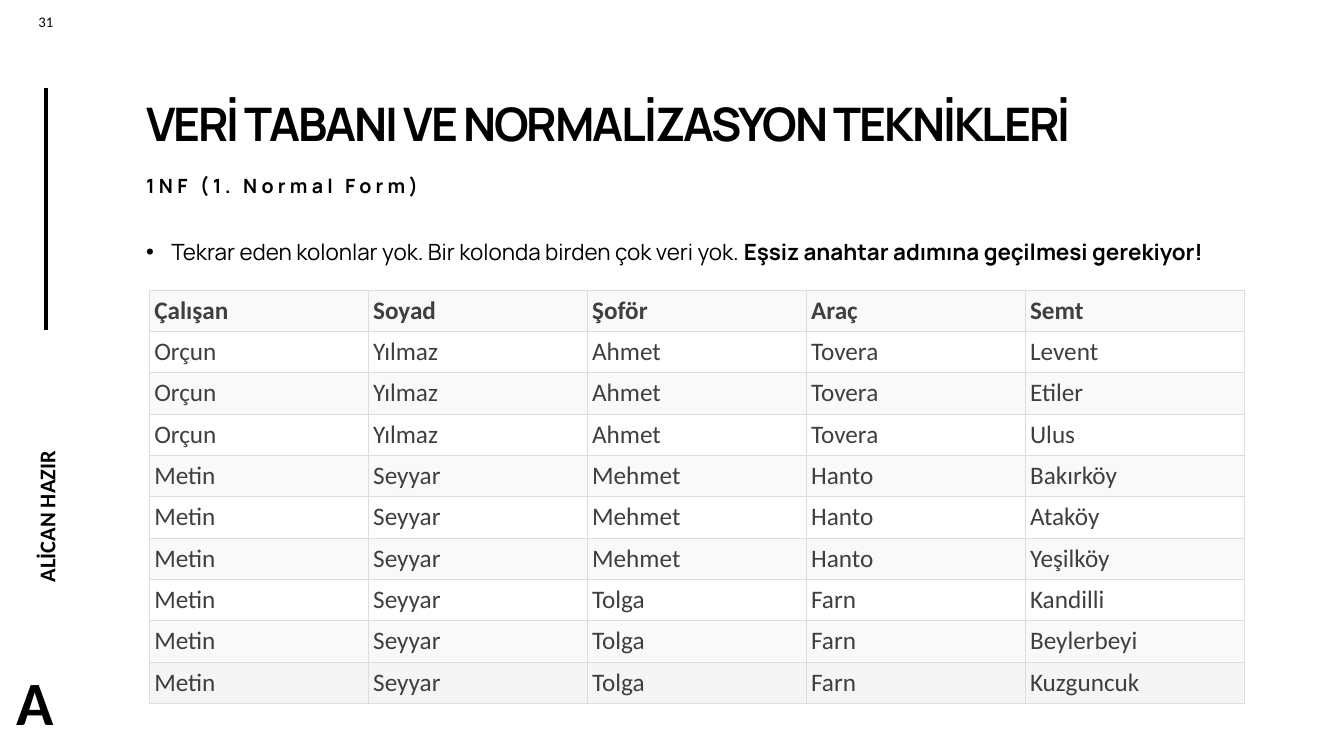
"""Build the slide on first normal form with its table of drivers."""
from lxml import etree
from pptx import Presentation
from pptx.dml.color import RGBColor
from pptx.enum.shapes import MSO_CONNECTOR
from pptx.enum.text import MSO_ANCHOR, MSO_AUTO_SIZE, PP_ALIGN
from pptx.oxml.ns import qn
from pptx.util import Inches, Pt

STRAIGHT = MSO_CONNECTOR.STRAIGHT
TOP, MIDDLE, BOTTOM = MSO_ANCHOR.TOP, MSO_ANCHOR.MIDDLE, MSO_ANCHOR.BOTTOM
LEFT, CENTER = PP_ALIGN.LEFT, PP_ALIGN.CENTER
NO_AUTOFIT = MSO_AUTO_SIZE.NONE
COLORS = {"ink": "000000", "cell": "3F3F3F", "border": "DDDDDD",
          "band": "F9F9F9", "plain": "FFFFFF", "last": "F5F5F5"}


def add_span(para, text, font, size, bold=False, color="ink", tracking=0):
    span = para.add_run()
    span.text = text
    formats = {"name": font, "size": Pt(size), "bold": bold}
    for name, value in formats.items():
        setattr(span.font, name, value)
    span.font.color.rgb = RGBColor.from_string(COLORS[color])
    if tracking:
        span.font._element.set("spc", str(int(tracking * 100)))


def place_text(box, bounds, insets, anchor, **para_format):
    for name, value in zip(("left", "top", "width", "height"), bounds):
        setattr(box, name, Inches(value))
    frame = box.text_frame
    frame.word_wrap = True
    frame.auto_size = NO_AUTOFIT
    frame.vertical_anchor = anchor
    for side, value in zip(("left", "top", "right", "bottom"), insets):
        setattr(frame, f"margin_{side}", Inches(value))
    para = frame.paragraphs[0]
    for name, value in para_format.items():
        setattr(para, name, value)
    return para


deck = Presentation()
deck.slide_width, deck.slide_height = Inches(13.33), Inches(7.5)
page = deck.slides.add_slide(deck.slide_layouts[5])
shapes = page.shapes
body_insets = (0, 0.05, 0.1, 0.05)
tight_insets = (0.02,) * 4

para = place_text(shapes.title, (1.45, 0.92, 10.88, 0.63), body_insets, BOTTOM,
                  alignment=LEFT, line_spacing=0.9)
add_span(para, "VERİ TABANI VE NORMALİZASYON TEKNİKLERİ", "Manrope", 33, True,
         tracking=-1.5)

author = shapes.add_textbox(0, 0, 0, 0)
para = place_text(author, (-0.42, 4.76, 1.76, 0.31), tight_insets, MIDDLE)
add_span(para, "ALİCAN HAZIR", "Calibri", 16, True)
author.rotation = 270

rule = shapes.add_connector(STRAIGHT, Inches(0.46), Inches(3.27), Inches(0.46), Inches(0.87))
rule.line.color.rgb = RGBColor.from_string(COLORS["ink"])
rule.line.width = Pt(3)
etree.SubElement(rule._element.spPr, qn("a:effectLst"))

page_number = shapes.add_textbox(0, 0, 0, 0)
para = place_text(page_number, (0.17, 0.08, 0.57, 0.27), (0.1, 0.05, 0.1, 0.05), TOP,
                  alignment=CENTER)
add_span(para, "31", "Calibri", 10.5)

initial = shapes.add_textbox(0, 0, 0, 0)
para = place_text(initial, (0.14, 6.56, 0.52, 0.78), tight_insets, MIDDLE)
add_span(para, "A", "Calibri", 44, True)

subtitle = shapes.add_textbox(0, 0, 0, 0)
para = place_text(subtitle, (1.45, 1.7, 9.31, 0.31), body_insets, TOP,
                  line_spacing=0.9, space_before=Pt(10))
add_span(para, "1NF (1. Normal Form)", "Manrope", 14, True, tracking=3)

note = shapes.add_textbox(0, 0, 0, 0)
para = place_text(note, (1.45, 2.18, 10.88, 0.56), body_insets, TOP,
                  line_spacing=1.5, space_before=Pt(10))
add_span(para, "Tekrar eden kolonlar yok. Bir kolonda birden çok veri yok. ", "Manrope", 16)
add_span(para, "Eşsiz anahtar adımına geçilmesi gerekiyor!", "Manrope", 16, True)
properties = para._p.get_or_add_pPr()
properties.set("marL", str(Inches(0.25)))
properties.set("indent", str(Inches(-0.25)))
etree.SubElement(properties, qn("a:buFont"), typeface="Arial")
etree.SubElement(properties, qn("a:buChar"), char="•")

drivers = [
    (("Orçun", "Yılmaz", "Ahmet", "Tovera"), ("Levent", "Etiler", "Ulus")),
    (("Metin", "Seyyar", "Mehmet", "Hanto"), ("Bakırköy", "Ataköy", "Yeşilköy")),
    (("Metin", "Seyyar", "Tolga", "Farn"), ("Kandilli", "Beylerbeyi", "Kuzguncuk")),
]
rows = [("Çalışan", "Soyad", "Şoför", "Araç", "Semt")]
rows += [(*driver, district) for driver, districts in drivers for district in districts]

table = shapes.add_table(len(rows), len(rows[0]), Inches(1.48), Inches(2.88),
                         Inches(10.86), Inches(4.1)).table
table.first_row = table.horz_banding = False
for row_index, values in enumerate(rows):
    table.rows[row_index].height = Inches(0.41)
    shade = "plain" if row_index % 2 else "band"
    if row_index == len(rows) - 1:
        shade = "last"
    for column_index, value in enumerate(values):
        cell = table.cell(row_index, column_index)
        for side in ("left", "top", "right", "bottom"):
            setattr(cell, f"margin_{side}", Inches(0.05))
        add_span(cell.text_frame.paragraphs[0], value, "Calibri", 18, row_index == 0, "cell")
        cell_properties = cell._tc.get_or_add_tcPr()
        for edge in ("lnL", "lnR", "lnT", "lnB"):
            border = etree.SubElement(cell_properties, qn(f"a:{edge}"), w=str(Pt(0.75)))
            fill = etree.SubElement(border, qn("a:solidFill"))
            etree.SubElement(fill, qn("a:srgbClr"), val=COLORS["border"])
        cell.fill.solid()
        cell.fill.fore_color.rgb = RGBColor.from_string(COLORS[shade])

deck.save("out.pptx")
